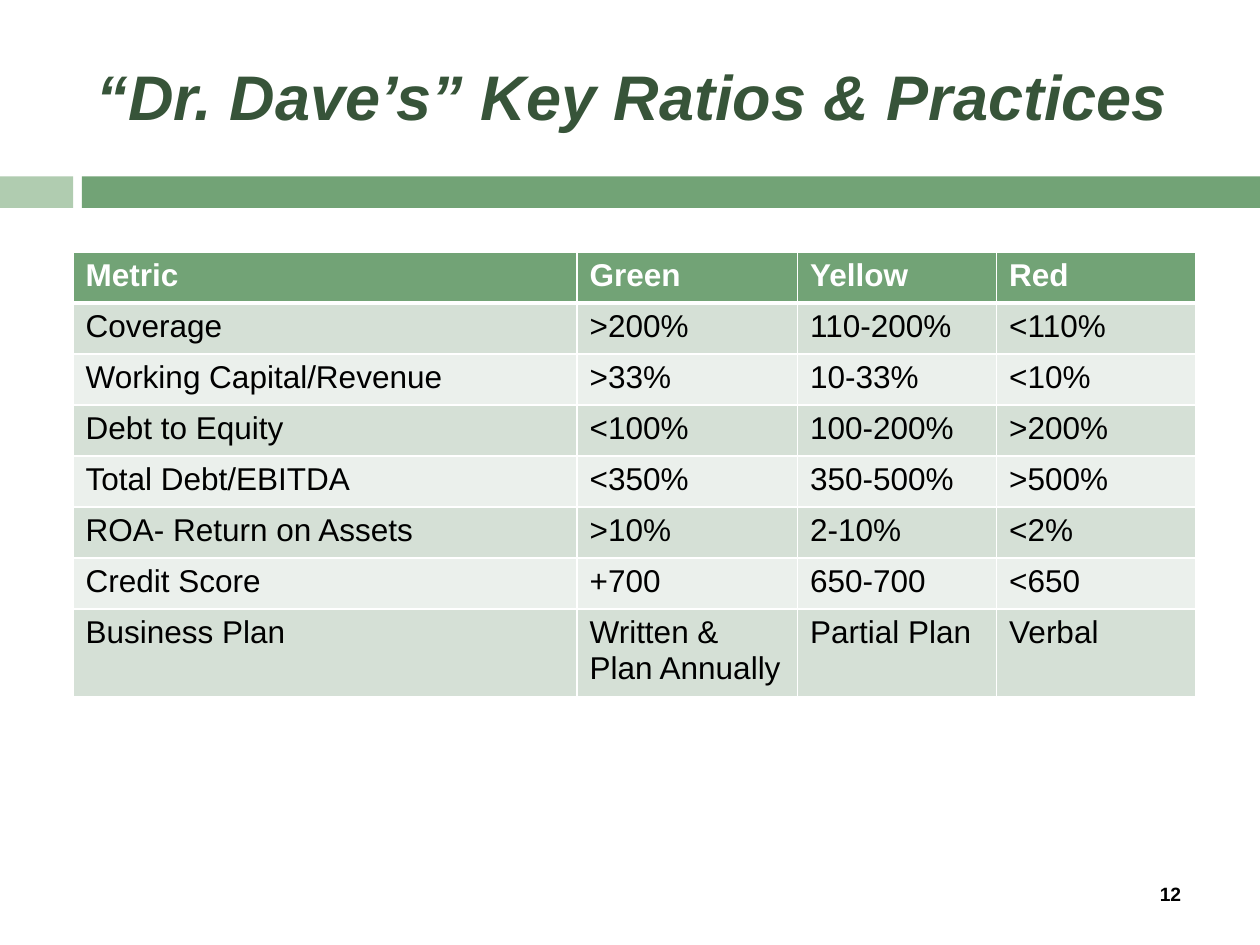
from dataclasses import dataclass

from lxml import etree
from pptx import Presentation
from pptx.dml.color import RGBColor
from pptx.enum.shapes import MSO_SHAPE
from pptx.enum.text import MSO_ANCHOR, PP_ALIGN
from pptx.oxml.ns import qn
from pptx.util import Inches, Pt

RECTANGLE = MSO_SHAPE.RECTANGLE
MIDDLE = MSO_ANCHOR.MIDDLE
LEFT, CENTER = PP_ALIGN.LEFT, PP_ALIGN.CENTER

FONT = "Arial"
COLORS = {
    "white": "FFFFFF",
    "black": "000000",
    "title": "375439",
    "green": "72A376",
    "light_green": "B0CCB0",
    "odd_row": "D5E0D6",
    "even_row": "EBF0EC",
}


@dataclass(frozen=True)
class Box:
    left: float
    top: float
    width: float
    height: float

    def lengths(self) -> tuple:
        return tuple(Inches(n) for n in (self.left, self.top, self.width, self.height))


@dataclass(frozen=True)
class TextStyle:
    size: float
    color: str
    bold: bool = False
    italic: bool = False


TITLE_STYLE = TextStyle(36, "title", bold=True, italic=True)
HEADER_STYLE = TextStyle(18, "white", bold=True)
BODY_STYLE = TextStyle(18, "black")
NUMBER_STYLE = TextStyle(11, "black", bold=True)

BANDS = [
    (Box(0, 1.4, 0.58, 0.25), "light_green"),
    (Box(0.65, 1.4, 9.35, 0.25), "green"),
]
TABLE_BOX = Box(0.58, 2, 8.91, 3.24)
COLUMN_WIDTHS = [4, 1.75, 1.58, 1.58]
RATIOS = [
    ("Metric", "Green", "Yellow", "Red"),
    ("Coverage", ">200%", "110-200%", "<110%"),
    ("Working Capital/Revenue", ">33%", "10-33%", "<10%"),
    ("Debt to Equity", "<100%", "100-200%", ">200%"),
    ("Total Debt/EBITDA", "<350%", "350-500%", ">500%"),
    ("ROA- Return on Assets", ">10%", "2-10%", "<2%"),
    ("Credit Score", "+700", "650-700", "<650"),
    ("Business Plan", "Written & Plan Annually", "Partial Plan", "Verbal"),
]


def rgb(name: str) -> RGBColor:
    return RGBColor.from_string(COLORS[name])


def add_run(paragraph, text: str, style: TextStyle) -> None:
    run = paragraph.add_run()
    run.text = text
    font = run.font
    font.name = FONT
    font.size = Pt(style.size)
    font.bold = style.bold
    font.italic = style.italic
    font.color.rgb = rgb(style.color)


def add_band(slide, box: Box, color: str) -> None:
    shape = slide.shapes.add_shape(RECTANGLE, *box.lengths())
    shape.shadow.inherit = False
    shape.fill.solid()
    shape.fill.fore_color.rgb = rgb(color)
    shape.line.fill.background()


def add_text(slide, box: Box, text: str, style: TextStyle, alignment) -> None:
    frame = slide.shapes.add_textbox(*box.lengths()).text_frame
    frame.word_wrap = True
    frame.vertical_anchor = MIDDLE
    paragraph = frame.paragraphs[0]
    paragraph.alignment = alignment
    add_run(paragraph, text, style)


def add_border(cell, side: str, points: float) -> None:
    """Draw one white cell border; it must precede the cell fill in the XML."""
    properties = cell._tc.get_or_add_tcPr()
    line = etree.SubElement(properties, qn(f"a:ln{side}"), w=str(Pt(points)))
    fill = etree.SubElement(line, qn("a:solidFill"))
    etree.SubElement(fill, qn("a:srgbClr"), val=COLORS["white"])


def fill_cell(cell, text: str, row: int) -> None:
    if row == 0:
        style, color = HEADER_STYLE, "green"
    else:
        style, color = BODY_STYLE, "odd_row" if row % 2 else "even_row"
    for side in "LRTB":
        is_header_rule = (row, side) in ((0, "B"), (1, "T"))
        add_border(cell, side, 3 if is_header_rule else 1)
    cell.fill.solid()
    cell.fill.fore_color.rgb = rgb(color)
    add_run(cell.text_frame.paragraphs[0], text, style)


def add_ratio_table(slide) -> None:
    table = slide.shapes.add_table(
        len(RATIOS), len(COLUMN_WIDTHS), *TABLE_BOX.lengths()
    ).table
    for column, width in zip(table.columns, COLUMN_WIDTHS):
        column.width = Inches(width)
    for row, values in enumerate(RATIOS):
        for column, text in enumerate(values):
            fill_cell(table.cell(row, column), text, row)


def main() -> None:
    presentation = Presentation()
    presentation.slide_width = Inches(10)
    presentation.slide_height = Inches(7.5)
    slide = presentation.slides.add_slide(presentation.slide_layouts[6])

    for box, color in BANDS:
        add_band(slide, box, color)
    add_text(slide, Box(0.67, 0.17, 8.92, 1.17),
             "“Dr. Dave’s” Key Ratios & Practices", TITLE_STYLE, LEFT)
    add_ratio_table(slide)
    add_text(slide, Box(9, 6.96, 0.58, 0.27), "12", NUMBER_STYLE, CENTER)

    presentation.save("out.pptx")


if __name__ == "__main__":
    main()
